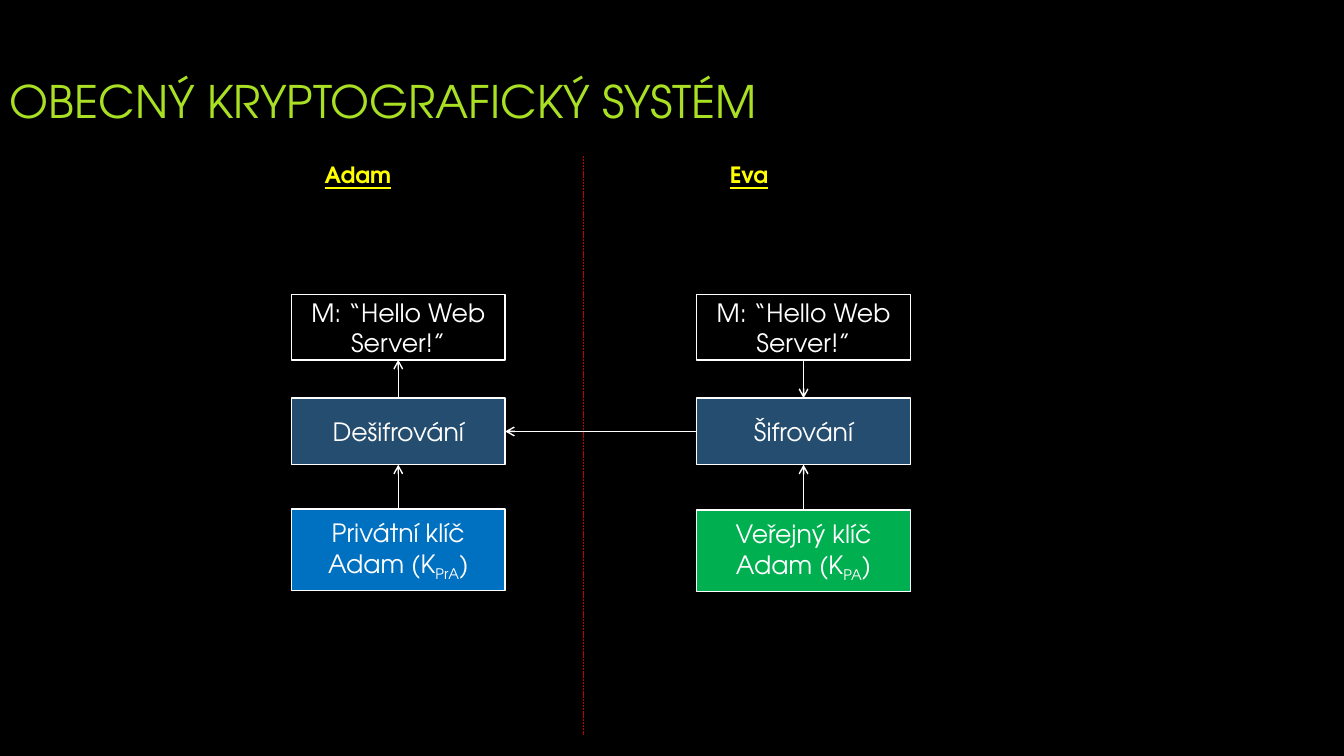
from dataclasses import dataclass

import pptx
import pptx.dml.color
import pptx.enum.dml
import pptx.enum.shapes
import pptx.enum.text
import pptx.oxml.ns
import pptx.shapes.autoshape
import pptx.shapes.connector
import pptx.slide
import pptx.text.text
import pptx.util
from lxml import etree

Inches = pptx.util.Inches
Pt = pptx.util.Pt
RGBColor = pptx.dml.color.RGBColor
Shape = pptx.shapes.autoshape.Shape
Connector = pptx.shapes.connector.Connector
Slide = pptx.slide.Slide
qn = pptx.oxml.ns.qn

FONT = "TeX Gyre Adventor"
BLACK = RGBColor(0x00, 0x00, 0x00)
WHITE = RGBColor(0xFF, 0xFF, 0xFF)
LIME = RGBColor(0xA9, 0xE0, 0x23)
YELLOW = RGBColor(0xFF, 0xFF, 0x00)
RED = RGBColor(0xC0, 0x00, 0x00)
NAVY = RGBColor(0x25, 0x4D, 0x6F)
BLUE = RGBColor(0x00, 0x70, 0xC0)
GREEN = RGBColor(0x00, 0xB0, 0x50)

BOX_W = 2.12
MESSAGE = "M: “Hello Web Server!”"
TOP, LEFT, BOTTOM, RIGHT = range(4)


@dataclass
class Party:
    name: str
    x: float
    operation: str
    key: str
    key_index: str
    key_y: float
    key_fill: RGBColor
    decrypts: bool


PARTIES = [
    Party("Adam", 2.89, "Dešifrování", "Privátní klíč\nAdam (K", "PrA", 5.05, BLUE, True),
    Party("Eva", 6.91, "Šifrování", "Veřejný klíč\nAdam (K", "PA", 5.06, GREEN, False),
]


def style_runs(p: pptx.text.text._Paragraph, size: int, color: RGBColor) -> None:
    for r in p.runs:
        r.font.name = FONT
        r.font.size = Pt(size)
        r.font.color.rgb = color


def add_text(s: Slide, text: str, x: float, y: float, w: float, h: float,
             size: int, color: RGBColor) -> Shape:
    sp = s.shapes.add_textbox(Inches(x), Inches(y), Inches(w), Inches(h))
    tf = sp.text_frame
    tf.word_wrap = True
    tf.text = text
    style_runs(tf.paragraphs[0], size, color)
    return sp


def add_box(s: Slide, text: str, x: float, y: float, h: float,
            fill: RGBColor | None = None, index: str = "") -> Shape:
    sp = s.shapes.add_shape(pptx.enum.shapes.MSO_SHAPE.RECTANGLE,
                            Inches(x), Inches(y), Inches(BOX_W), Inches(h))
    sp.shadow.inherit = False
    if fill is None:
        sp.fill.background()
    else:
        sp.fill.solid()
        sp.fill.fore_color.rgb = fill
    sp.line.color.rgb = WHITE
    sp.line.width = Pt(1)
    tf = sp.text_frame
    tf.word_wrap = True
    tf.vertical_anchor = pptx.enum.text.MSO_ANCHOR.MIDDLE
    p = tf.paragraphs[0]
    p.text = text
    p.alignment = pptx.enum.text.PP_ALIGN.CENTER
    if index:
        r = p.add_run()
        r.text = index
        r.font._element.set("baseline", "-25000")
        p.add_run().text = ")"
    style_runs(p, 18, WHITE)
    return sp


def add_line(s: Slide, x1: float, y1: float, x2: float, y2: float,
             color: RGBColor, width: float) -> Connector:
    line = s.shapes.add_connector(pptx.enum.shapes.MSO_CONNECTOR.STRAIGHT,
                                  Inches(x1), Inches(y1), Inches(x2), Inches(y2))
    line.line.color.rgb = color
    line.line.width = Pt(width)
    etree.SubElement(line._element.spPr, qn("a:effectLst"))
    return line


def add_arrow(s: Slide, start: Shape, start_side: int, end: Shape, end_side: int) -> None:
    line = add_line(s, 0, 0, 0, 0, WHITE, 1)
    line.begin_connect(start, start_side)
    line.end_connect(end, end_side)
    etree.SubElement(line.line._get_or_add_ln(), qn("a:tailEnd"), type="arrow")


def add_party(s: Slide, party: Party) -> Shape:
    # Underlined name
    name = add_text(s, party.name, party.x + 0.23, 1.55, 0.92, 0.37, 16, YELLOW)
    name.text_frame.auto_size = pptx.enum.text.MSO_AUTO_SIZE.SHAPE_TO_FIT_TEXT
    font = name.text_frame.paragraphs[0].runs[0].font
    font.bold = True
    font.underline = True

    # Message, operation and key
    message = add_box(s, MESSAGE, party.x, 2.92, 0.65)
    operation = add_box(s, party.operation, party.x, 3.95, 0.66, NAVY)
    key = add_box(s, party.key, party.x, party.key_y, 0.81, party.key_fill, party.key_index)

    # Flow between the boxes
    add_arrow(s, key, TOP, operation, BOTTOM)
    if party.decrypts:
        add_arrow(s, operation, TOP, message, BOTTOM)
    else:
        add_arrow(s, message, BOTTOM, operation, TOP)
    return operation


def main() -> None:
    prs = pptx.Presentation()
    prs.slide_width = Inches(13.33)
    prs.slide_height = Inches(7.5)
    s = prs.slides.add_slide(prs.slide_layouts[6])
    s.background.fill.solid()
    s.background.fill.fore_color.rgb = BLACK

    # Title
    title = add_text(s, "OBECNÝ KRYPTOGRAFICKÝ SYSTÉM", 0, 0.67, 13.33, 0.65, 32, LIME)
    title.text_frame.vertical_anchor = pptx.enum.text.MSO_ANCHOR.MIDDLE

    # Divider between the parties
    divider = add_line(s, 5.79, 1.55, 5.79, 7.29, RED, 0.5)
    divider.line.dash_style = pptx.enum.dml.MSO_LINE.SQUARE_DOT

    # Both parties and the transfer of the ciphertext
    decryption, encryption = [add_party(s, party) for party in PARTIES]
    add_arrow(s, encryption, LEFT, decryption, RIGHT)

    prs.save("out.pptx")


if __name__ == "__main__":
    main()
